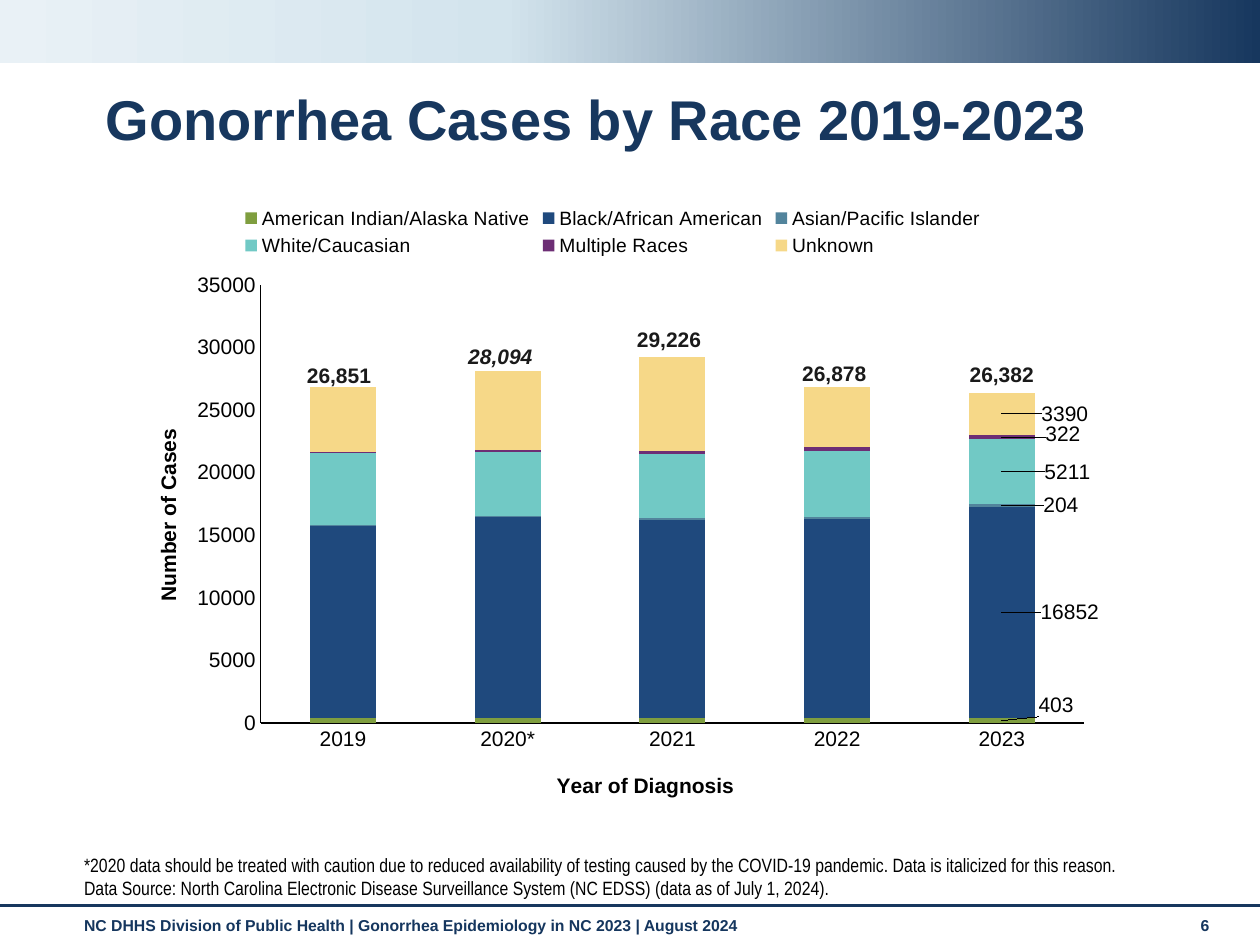
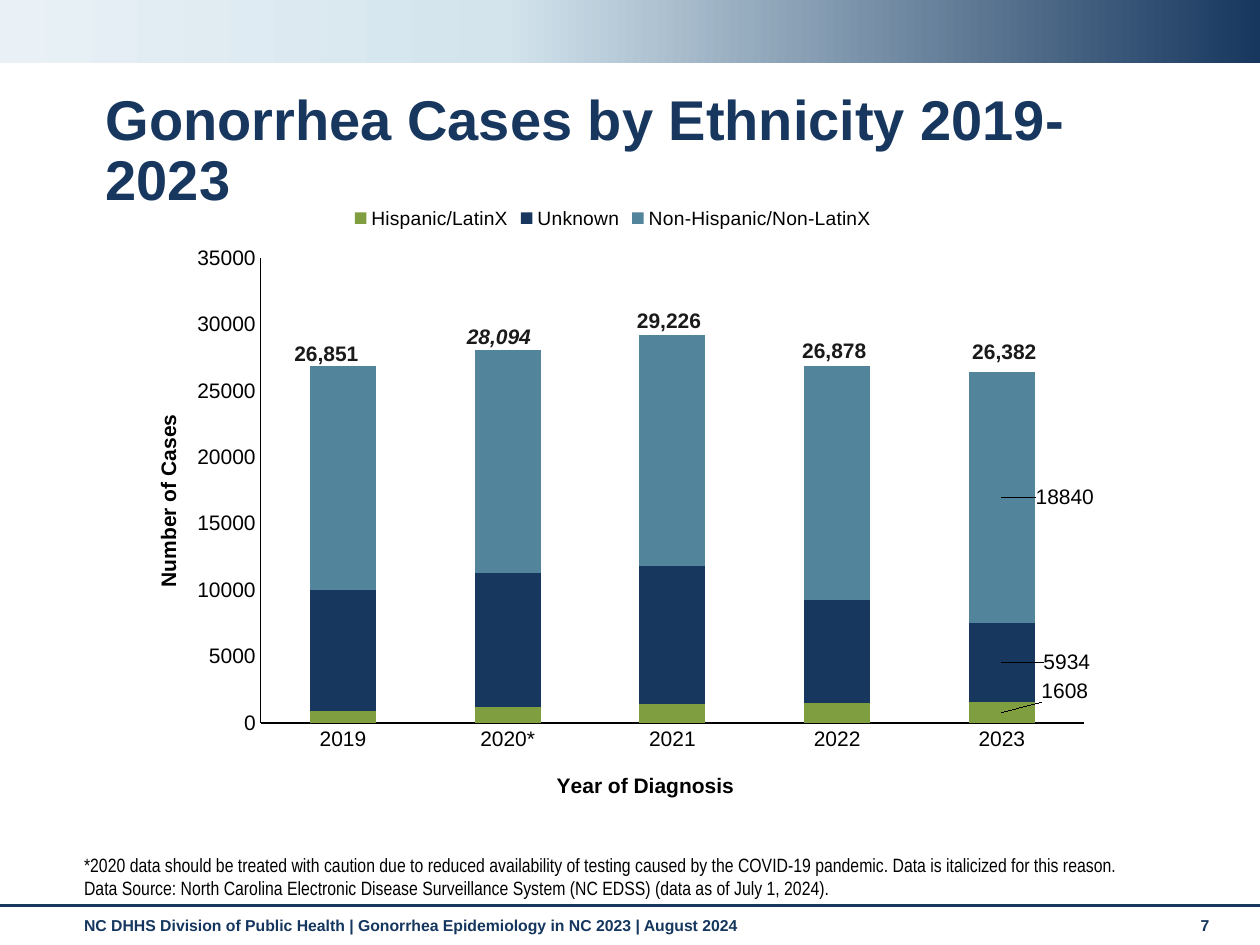
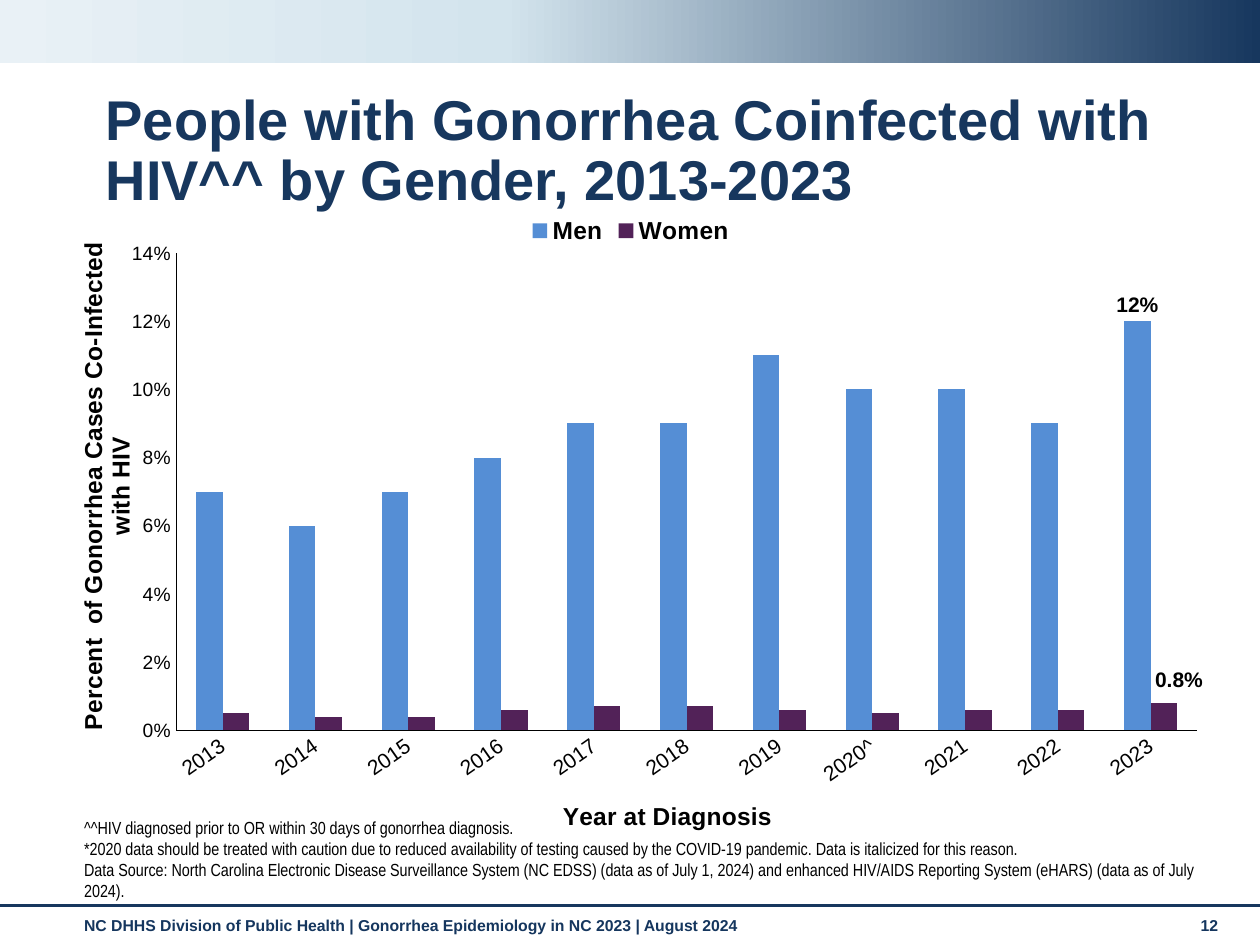
from dataclasses import dataclass

from lxml.etree import SubElement
from pptx import Presentation
from pptx.chart.data import CategoryChartData
from pptx.dml.color import RGBColor
from pptx.enum.chart import (XL_CHART_TYPE as ChartType, XL_LABEL_POSITION as LabelPos,
                             XL_LEGEND_POSITION as LegendPos, XL_TICK_MARK as TickMark)
from pptx.enum.shapes import MSO_CONNECTOR as Connector, MSO_SHAPE as Preset
from pptx.enum.text import MSO_ANCHOR as Anchor, PP_ALIGN as Align
from pptx.oxml import parse_xml
from pptx.oxml.ns import nsdecls, qn
from pptx.util import Pt


@dataclass(frozen=True)
class Theme:
    font: str = "Arial"
    note_font: str = "Arial Narrow"
    navy: str = "17375E"
    footer: str = "15365E"
    black: str = "000000"
    total: str = "1A1A1A"
    band: tuple = ((0, "17375E"), (60, "D3E4ED"), (100, "E9F1F6"))
    green: str = "7F9E3F"
    blue: str = "1F497D"
    teal: str = "52849C"
    aqua: str = "71C9C5"
    purple: str = "6D2E75"
    yellow: str = "F6D888"
    sky: str = "558ED5"
    plum: str = "522258"
    title_size: int = 32
    label_size: int = 12
    footer_size: int = 9


@dataclass(frozen=True)
class ChartStyle:
    kind: ChartType
    tick_format: str
    maximum: float
    step: float
    overlap: int
    label_position: LabelPos
    axis_line: float
    tick_size: int
    heading_size: int
    legend_size: int
    bold: bool = False
    tilt: int = 0


THEME = Theme()
STACKED = ChartStyle(ChartType.COLUMN_STACKED, "########0", 35000, 5000, 100,
                     LabelPos.CENTER, 0.75, 12, 12, 11)
CLUSTERED = ChartStyle(ChartType.COLUMN_CLUSTERED, "0%", 0.14, 0.02, 0,
                       LabelPos.OUTSIDE_END, 0.25, 11, 14, 14, True, -35)

FOOTER = "NC DHHS Division of Public Health | Gonorrhea Epidemiology in NC 2023 | August 2024"
CAUTION = ("*2020 data should be treated with caution due to reduced availability of testing "
           "caused by the COVID-19 pandemic. Data is italicized for this reason.")
SOURCE = ("Data Source: North Carolina Electronic Disease Surveillance System (NC EDSS) "
          "(data as of July 1, 2024)")
YEARS = ["2019", "2020*", "2021", "2022", "2023"]
TOTALS = ["26,851", "28,094", "29,226", "26,878", "26,382"]

# Each series: name, colour, values, shift of the last label (fractions of the chart)
RACES = [
    ("American Indian/Alaska Native", THEME.green, (378, 370, 363, 415, 403), (0.055, -0.024)),
    ("Black/African American", THEME.blue, (15338, 16043, 15887, 15898, 16852), (0.069, 0)),
    ("Asian/Pacific Islander", THEME.teal, (99, 112, 140, 176, 204), (0.06, 0)),
    ("White/Caucasian", THEME.aqua, (5742, 5128, 5140, 5278, 5211), (0.067, 0)),
    ("Multiple Races", THEME.purple, (106, 152, 180, 255, 322), (0.062, -0.005)),
    ("Unknown", THEME.yellow, (5188, 6289, 7516, 4856, 3390), (0.064, 0)),
]
ETHNICITIES = [
    ("Hispanic/LatinX", THEME.green, (899, 1189, 1446, 1507, 1608), (0.064, -0.034)),
    ("Unknown", THEME.navy, (9114, 10114, 10334, 7729, 5934), (0.066, 0)),
    ("Non-Hispanic/Non-LatinX", THEME.teal, (16838, 16791, 17446, 17642, 18840), (0.064, 0)),
]
GENDERS = [
    ("Men", THEME.sky,
     (0.07, 0.06, 0.07, 0.08, 0.09, 0.09, 0.11, 0.1, 0.1, 0.09, 0.12), None),
    ("Women", THEME.plum,
     (0.005, 0.004, 0.004, 0.006, 0.007, 0.007, 0.006, 0.005, 0.006, 0.006, 0.008),
     (0.013, -0.01)),
]


def style_font(font, size, color=THEME.black, bold=False, italic=False, name=THEME.font):
    font.name, font.size, font.bold, font.italic = name, Pt(size), bold, italic
    font.color.rgb = RGBColor.from_string(color)


def manual_layout(target="", mode="", **fractions):
    """Chart layout element; fractions are x, y and optionally w, h."""
    parts = [("layoutTarget", target)] if target else []
    parts += [("xMode", mode), ("yMode", mode)] if mode else []
    parts += fractions.items()
    inner = "".join(f'<c:{tag} val="{value}"/>' for tag, value in parts)
    return parse_xml(f'<c:layout {nsdecls("c")}><c:manualLayout>{inner}'
                     "</c:manualLayout></c:layout>")


def drop_layout(element):
    for layout in element.findall(qn("c:layout")):
        element.remove(layout)


class Deck:
    def __init__(self, theme):
        self.theme = theme
        self.prs = Presentation()
        self.prs.slide_width, self.prs.slide_height = Pt(720), Pt(540)
        self.slide = None

    def text(self, box, lines, size, color, align=Align.LEFT, anchor=Anchor.TOP,
             spacing=None, **look):
        frame = self.slide.shapes.add_textbox(*map(Pt, box)).text_frame
        frame.word_wrap = True
        frame.vertical_anchor = anchor
        frame.text = "\n".join(lines)
        for paragraph in frame.paragraphs:
            paragraph.alignment = align
            if spacing:
                paragraph.line_spacing = spacing
            for run in paragraph.runs:
                style_font(run.font, size, color, **look)

    def band(self):
        band = self.slide.shapes.add_shape(Preset.RECTANGLE, 0, 0, Pt(720), Pt(36))
        band.shadow.inherit = False
        band.line.fill.background()
        band.fill.background()
        stops = "".join(f'<a:gs pos="{pos * 1000}"><a:srgbClr val="{color}"/></a:gs>'
                        for pos, color in self.theme.band)
        gradient = parse_xml(f'<a:gradFill {nsdecls("a")}><a:gsLst>{stops}</a:gsLst>'
                             '<a:lin ang="10800000" scaled="0"/></a:gradFill>')
        properties = band._element.spPr
        properties.replace(properties.find(qn("a:noFill")), gradient)

    def rule(self, y):
        rule = self.slide.shapes.add_connector(Connector.STRAIGHT, 0, Pt(y), Pt(720), Pt(y))
        rule.line.color.rgb = RGBColor.from_string(self.theme.navy)
        rule.line.width = Pt(1.75)
        SubElement(rule._element.spPr, qn("a:effectLst"))

    def new_slide(self, title, number, title_width=617.8):
        theme = self.theme
        self.slide = self.prs.slides.add_slide(self.prs.slide_layouts[6])
        self.text((41, 519.8, 629.3, 21), [FOOTER], theme.footer_size, theme.footer, bold=True)
        self.text((679, 519.8, 31.7, 21), [str(number)], theme.footer_size, theme.footer,
                  bold=True)
        self.band()
        self.rule(517.7)
        self.text((53.3, 49, title_width, 43.2), [title], theme.title_size, theme.navy,
                  spacing=0.9, bold=True)

    def footnote(self, box, lines, size):
        self.text(box, lines, size, self.theme.black, anchor=Anchor.BOTTOM,
                  name=self.theme.note_font)

    def totals(self, corners):
        for total, year, (x, y) in zip(TOTALS, YEARS, corners):
            self.text((x, y, 70.6, 21.6), [total], self.theme.label_size, self.theme.total,
                      align=Align.CENTER, bold=True, italic=year.endswith("*"))

    def axis(self, axis, heading, place, style, size, rotation=0):
        axis.major_tick_mark = axis.minor_tick_mark = TickMark.NONE
        axis.has_major_gridlines = False
        axis.format.line.width = Pt(style.axis_line)
        axis.format.line.color.rgb = RGBColor.from_string(self.theme.black)
        style_font(axis.tick_labels.font, size)
        frame = axis.axis_title.text_frame
        frame.text = heading
        style_font(frame.paragraphs[0].runs[0].font, style.heading_size, bold=True)
        frame._txBody.bodyPr.set("rot", str(rotation * 60000))
        title = axis.axis_title._element
        drop_layout(title)
        x, y = place
        title.find(qn("c:tx")).addnext(manual_layout(mode="edge", x=x, y=y))

    def label_last(self, series, count, shift, style):
        series.data_labels.show_value = False
        label = series.points[count - 1].data_label
        style_font(label.font, self.theme.label_size, bold=style.bold)
        label.position = style.label_position
        if shift:
            element = series._element.xpath("c:dLbls/c:dLbl")[0]
            x, y = shift
            element.find(qn("c:idx")).addnext(manual_layout(x=x, y=y))

    def column_chart(self, box, style, categories, groups, plot_area, headings, places,
                     formats=None):
        """Column chart; headings and places are for the category and value axes."""
        data = CategoryChartData()
        data.categories = categories
        formats = formats or [style.tick_format] * len(groups)
        for (name, _, values, _), number_format in zip(groups, formats):
            data.add_series(name, values, number_format)
        chart = self.slide.shapes.add_chart(style.kind, *map(Pt, box), data).chart
        chart.has_title = False
        style_font(chart.font, self.theme.label_size)
        chart.has_legend = True
        chart.legend.position = LegendPos.TOP
        chart.legend.include_in_layout = False
        style_font(chart.legend.font, style.legend_size, bold=style.bold)

        plot = chart.plots[0]
        plot.vary_by_categories = False
        plot.gap_width, plot.overlap = 150, style.overlap
        for series, (_, color, _, shift) in zip(plot.series, groups):
            series.format.fill.solid()
            series.format.fill.fore_color.rgb = RGBColor.from_string(color)
            self.label_last(series, len(categories), shift, style)

        years, cases = chart.category_axis, chart.value_axis
        self.axis(years, headings[0], places[0], style, self.theme.label_size)
        self.axis(cases, headings[1], places[1], style, style.tick_size, rotation=-90)
        cases.minimum_scale, cases.maximum_scale = 0, style.maximum
        cases.major_unit = style.step
        cases.tick_labels.number_format = style.tick_format
        cases.tick_labels.number_format_is_linked = False
        if style.tilt:
            tick_text = years._element.find(qn("c:txPr"))
            tick_text.find(qn("a:bodyPr")).set("rot", str(style.tilt * 60000))

        area = chart._chartSpace.chart.plotArea
        drop_layout(area)
        area.insert(0, manual_layout("inner", "edge", **dict(zip("xywh", plot_area))))

    def stacked_slide(self, title, number, groups, plot_top, heading_top, corners):
        self.new_slide(title, number)
        self.footnote((41, 491.8, 655.2, 25.9), [CAUTION, SOURCE + "."], 11)
        self.column_chart((69.1, 110.2, 562.3, 357.8), STACKED, YEARS, groups,
                          (0.142, plot_top, 0.837, round(0.847 - plot_top, 3)),
                          ("Year of Diagnosis", "Number of Cases"),
                          ((0.439, 0.92), (0.031, heading_top)))
        self.totals(corners)


def main():
    deck = Deck(THEME)
    deck.stacked_slide("Gonorrhea Cases by Race 2019-2023", 6, RACES, 0.147, 0.371,
                       [(158.4, 203.8), (250.6, 193), (347, 182.9), (441.4, 202.3),
                        (537.1, 203)])
    deck.stacked_slide("Gonorrhea Cases by Ethnicity 2019-2023", 7, ETHNICITIES, 0.104, 0.348,
                       [(151.2, 190.8), (249.8, 181.4), (347, 172.1), (441.4, 189.4),
                        (538.6, 190.1)])

    deck.new_slide("People with Gonorrhea Coinfected with HIV^^ by Gender, 2013-2023", 12, 657.4)
    deck.footnote((41, 503.3, 668.9, 15.1),
                  ["^^HIV diagnosed prior to OR within 30 days of gonorrhea diagnosis.", CAUTION,
                   SOURCE + " and enhanced HIV/AIDS Reporting System (eHARS) "
                   "(data as of July 2024)."], 10)
    years = [f"{year}^" if year == 2020 else str(year) for year in range(2013, 2024)]
    deck.column_chart((27.4, 115.9, 666, 363.6), CLUSTERED, years, GENDERS,
                      (0.11, 0.079, 0.876, 0.75),
                      ("Year at Diagnosis", "Percent  of Gonorrhea Cases Co-Infected with HIV"),
                      ((0.438, 0.932), (0.021, 0.055)), formats=("0%", "0.0%"))
    deck.prs.save("out.pptx")


if __name__ == "__main__":
    main()
